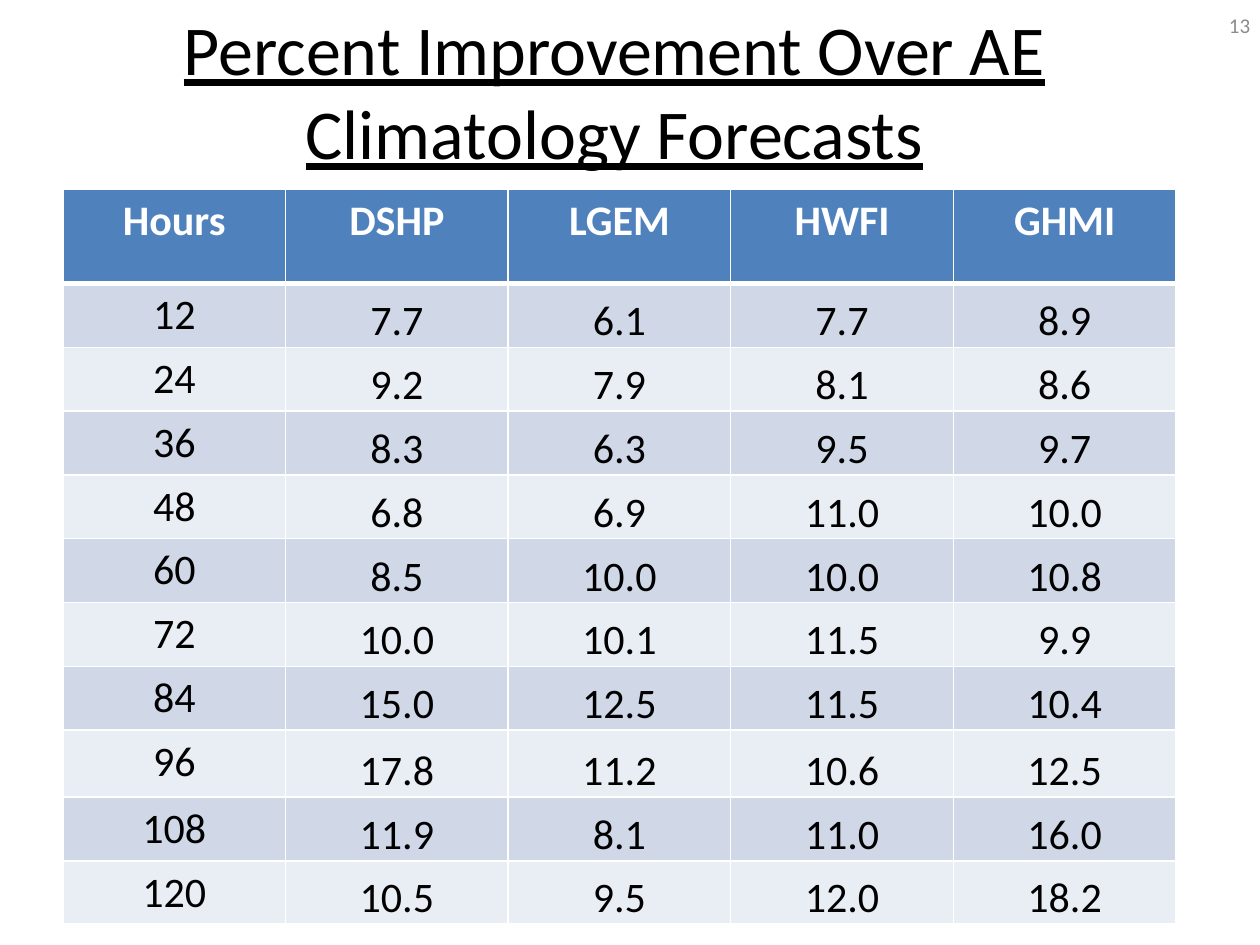
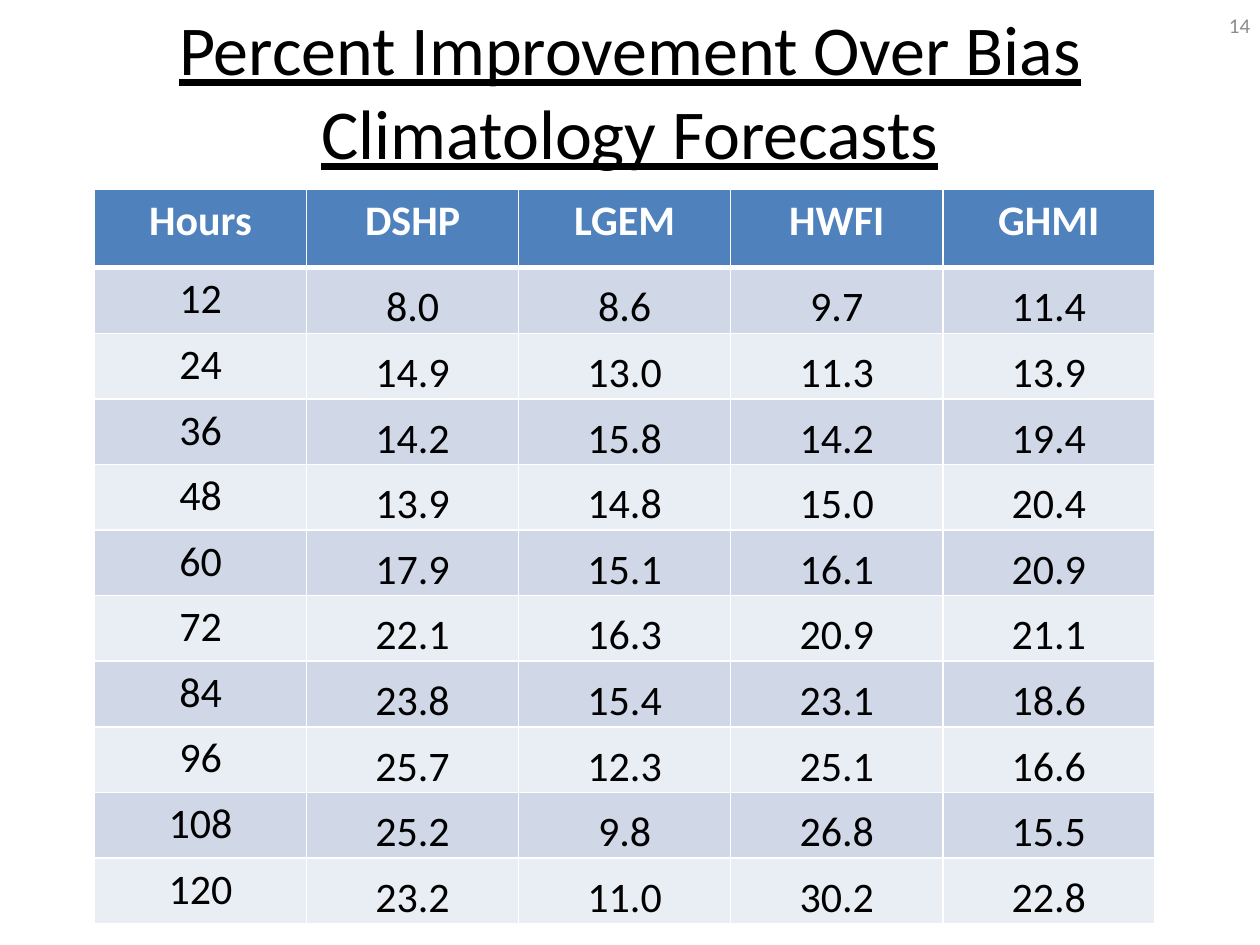
import pptx
import pptx.util
import pptx.dml.color
import pptx.enum.text
import pptx.oxml
import pptx.oxml.ns

COLORS = {"text": "000000", "muted": "8C8C8C", "white": "FFFFFF",
          "header": "4F81BD", "odd": "D0D8E8", "even": "E9EDF4"}
FONT = "Calibri"
COLS, ROWS = 120, 90
WIDTH, HEIGHT = pptx.util.Inches(10), pptx.util.Inches(7.5)
ALIGN = pptx.enum.text.PP_ALIGN
ANCHOR = pptx.enum.text.MSO_ANCHOR

NUMBER_BOX = (92.25, 0, 28, 4.75)
MODELS = ["Hours", "DSHP", "LGEM", "HWFI", "GHMI"]
HOURS = range(12, 121, 12)

SLIDES = [
    {"number": 13,
     "title": "Percent Improvement Over AE Climatology Forecasts",
     "title_box": (6, 4, 105, 9),
     "table_box": (6, 18, 106, 69.4),
     "row_heights": [9] + [6.08] * 7 + [6.4, 6.08, 5.25],
     "values": [
         (7.7, 6.1, 7.7, 8.9), (9.2, 7.9, 8.1, 8.6),
         (8.3, 6.3, 9.5, 9.7), (6.8, 6.9, 11.0, 10.0),
         (8.5, 10.0, 10.0, 10.8), (10.0, 10.1, 11.5, 9.9),
         (15.0, 12.5, 11.5, 10.4), (17.8, 11.2, 10.6, 12.5),
         (11.9, 8.1, 11.0, 16.0), (10.5, 9.5, 12.0, 18.2)]},
    {"number": 14,
     "title": "Percent Improvement Over Bias Climatology Forecasts",
     "title_box": (6, 1, 108, 15),
     "table_box": (9, 18, 101, 70),
     "row_heights": [7.5] + [6.25] * 10,
     "values": [
         (8.0, 8.6, 9.7, 11.4), (14.9, 13.0, 11.3, 13.9),
         (14.2, 15.8, 14.2, 19.4), (13.9, 14.8, 15.0, 20.4),
         (17.9, 15.1, 16.1, 20.9), (22.1, 16.3, 20.9, 21.1),
         (23.8, 15.4, 23.1, 18.6), (25.7, 12.3, 25.1, 16.6),
         (25.2, 9.8, 26.8, 15.5), (23.2, 11.0, 30.2, 22.8)]},
]


def rgb(name):
    return pptx.dml.color.RGBColor.from_string(COLORS[name])


def across(cols):
    return round(WIDTH * cols / COLS)


def down(rows):
    return round(HEIGHT * rows / ROWS)


def place(box):
    """Turn a (column, row, columns, rows) box into slide lengths."""
    x, y, w, h = box
    return across(x), down(y), across(w), down(h)


def write(tf, text, size=24, color="text", bold=False, underline=False, align=ALIGN.CENTER):
    p = tf.paragraphs[0]
    p.alignment = align
    r = p.add_run()
    r.text = text
    r.font.name = FONT
    r.font.size = pptx.util.Pt(size)
    r.font.color.rgb = rgb(color)
    r.font.bold = bold
    r.font.underline = underline


def add_text(s, box, text, **style):
    tf = s.shapes.add_textbox(*place(box)).text_frame
    tf.word_wrap = True
    tf.vertical_anchor = ANCHOR.MIDDLE
    write(tf, text, **style)


def set_borders(cell, top=1, bottom=1):
    """Draw white cell borders; widths are in points."""
    tcPr = cell._tc.get_or_add_tcPr()
    for side, width in (("L", 1), ("R", 1), ("T", top), ("B", bottom)):
        tcPr.append(pptx.oxml.parse_xml(
            f'<a:ln{side} {pptx.oxml.ns.nsdecls("a")} w="{pptx.util.Pt(width)}">'
            f'<a:solidFill><a:srgbClr val="{COLORS["white"]}"/></a:solidFill></a:ln{side}>'))


def fill_cell(cell, text, row, col):
    header = row == 0
    set_borders(cell, top=3 if row == 1 else 1, bottom=3 if header else 1)
    cell.fill.solid()
    cell.fill.fore_color.rgb = rgb("header" if header else "odd" if row % 2 else "even")
    if col and not header:
        cell.vertical_anchor = ANCHOR.BOTTOM
        cell.margin_left = cell.margin_right = cell.margin_top = pptx.util.Inches(0.01)
        cell.margin_bottom = 0
    write(cell.text_frame, text, color="white" if header else "text", bold=header)


def add_forecast_table(s, box, row_heights, values):
    rows = [MODELS] + [[str(hour)] + [f"{v:.1f}" for v in scores]
                       for hour, scores in zip(HOURS, values)]
    table = s.shapes.add_table(len(rows), len(MODELS), *place(box)).table
    for column in table.columns:
        column.width = across(box[2] / len(MODELS))
    for i, (height, texts) in enumerate(zip(row_heights, rows)):
        table.rows[i].height = down(height)
        for j, text in enumerate(texts):
            fill_cell(table.cell(i, j), text, i, j)


def add_forecast_slide(prs, data):
    s = prs.slides.add_slide(prs.slide_layouts[6])
    add_text(s, data["title_box"], data["title"], size=40, underline=True)
    add_forecast_table(s, data["table_box"], data["row_heights"], data["values"])
    add_text(s, NUMBER_BOX, str(data["number"]), size=12, color="muted", align=ALIGN.RIGHT)


def main():
    prs = pptx.Presentation()
    prs.slide_width, prs.slide_height = WIDTH, HEIGHT
    for data in SLIDES:
        add_forecast_slide(prs, data)
    prs.save("out.pptx")


if __name__ == "__main__":
    main()
